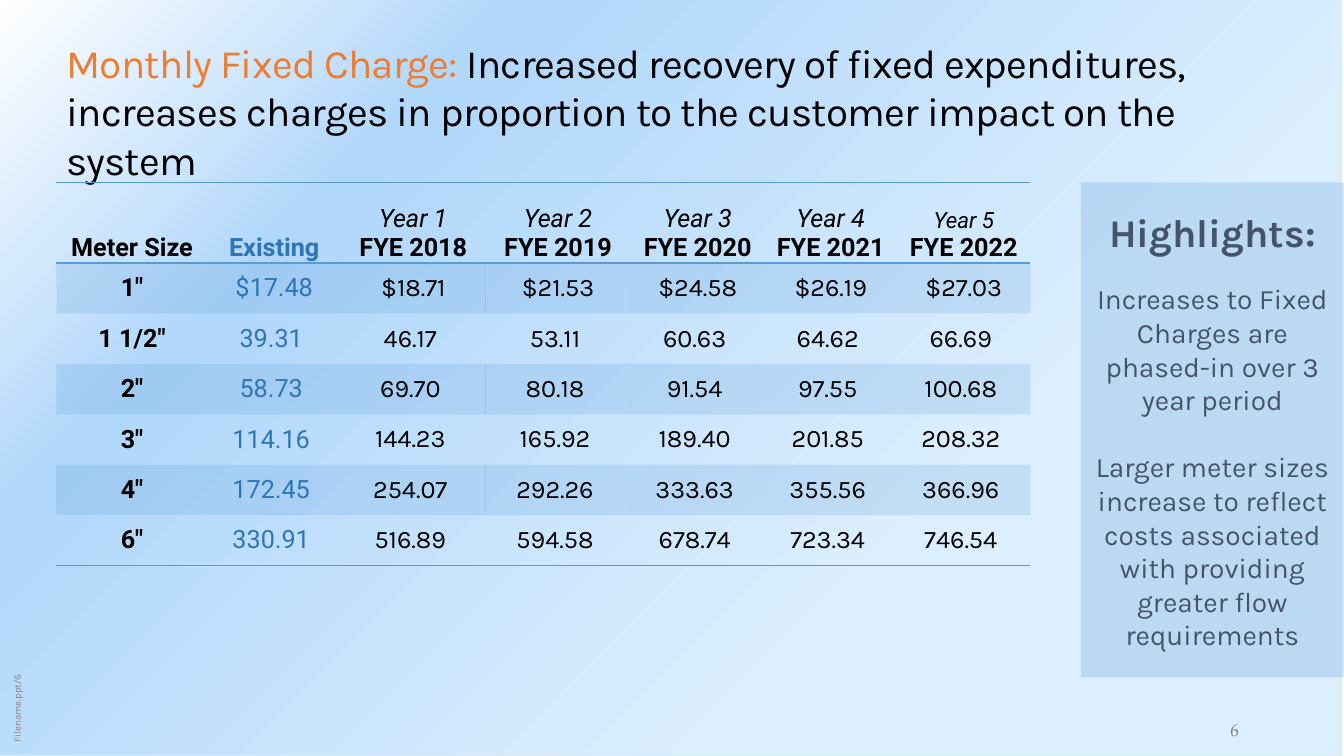
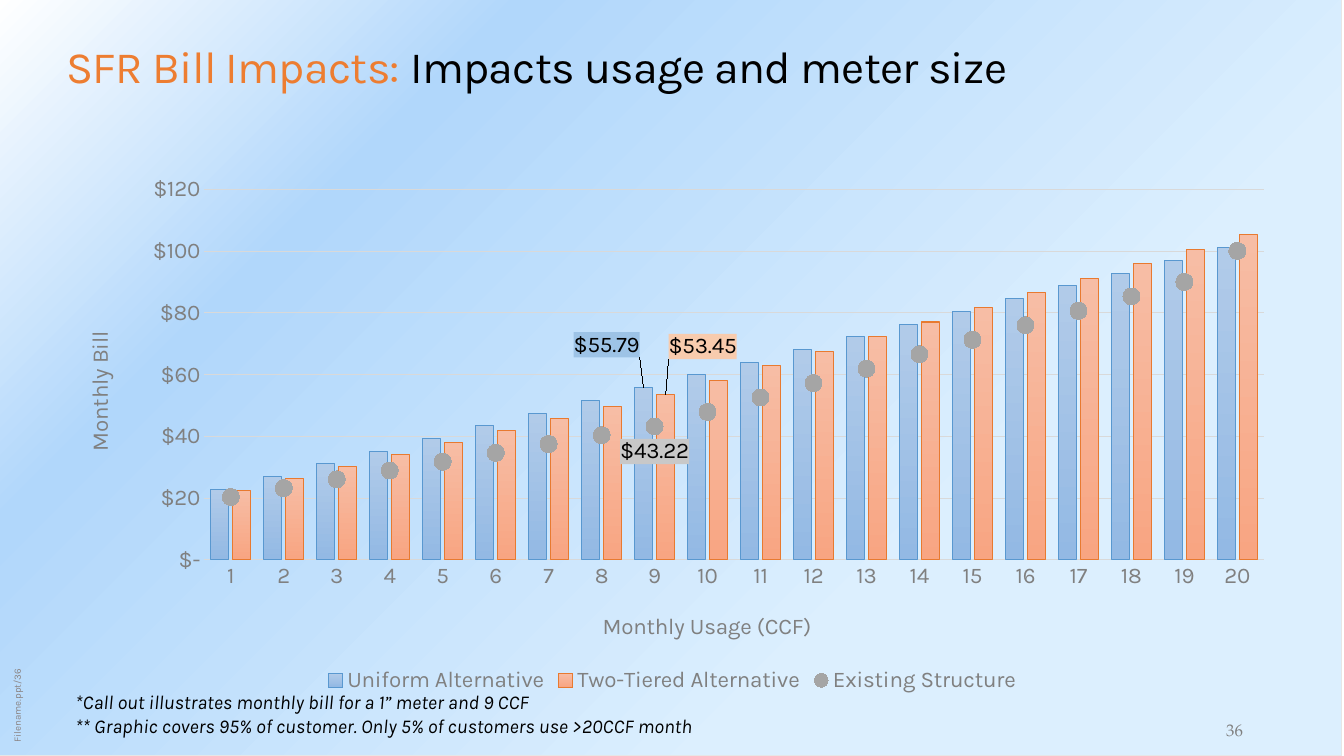
from pptx import Presentation
from pptx.chart.data import CategoryChartData
from pptx.dml.color import RGBColor
from pptx.enum.chart import XL_CHART_TYPE, XL_LABEL_POSITION, XL_LEGEND_POSITION, XL_MARKER_STYLE, XL_TICK_MARK
from pptx.enum.shapes import MSO_SHAPE
from pptx.enum.text import MSO_ANCHOR, MSO_AUTO_SIZE, PP_ALIGN
from pptx.oxml import parse_xml
from pptx.oxml.ns import nsdecls, qn
from pptx.util import Emu, Pt

SCALE = 9144
SANS, HEAD, SERIF = "Karla", "Roboto", "TeX Gyre Pagella"
BLACK, ORANGE, BLUE, DEEP, SLATE = "000000", "ED7D31", "5B9BD5", "2E75B6", "44546A"
GREY, PALE, TAG, MARK = "808080", "D9D9D9", "8B8585", "A5A5A5"
NO_STYLE = "{2D5ABB26-0587-4C30-8999-92F81FD0307C}"


def px(*values):
    return [Emu(v * SCALE) for v in values]


def rgb(color):
    return RGBColor.from_string(color)


def style(font, size, color, name=SANS, bold=False, italic=False):
    font.size, font.name, font.bold, font.italic = Pt(size), name, bold, italic
    font.color.rgb = rgb(color)


def tint(fill, props, color, percent):
    fill.solid()
    fill.fore_color.rgb = rgb(color)
    props.find(".//" + qn("a:srgbClr")).append(
        parse_xml(f'<a:alpha {nsdecls("a")} val="{percent * 1000}"/>'))


def add_text(s, box, lines, size, color, name=SANS, italic=False, align=PP_ALIGN.LEFT,
             anchor=MSO_ANCHOR.TOP, inset=None):
    sp = s.shapes.add_textbox(*px(*box))
    tf = sp.text_frame
    tf.word_wrap = True
    tf.vertical_anchor = anchor
    if inset is not None:
        tf.margin_left, tf.margin_right, tf.margin_top, tf.margin_bottom = px(*[inset] * 4)
    tf.text = "\n".join(lines)
    for p in tf.paragraphs:
        p.alignment = align
        style(p.font, size, color, name, italic=italic)
    return sp


def add_backdrop(prs, s):
    sp = s.shapes.add_shape(MSO_SHAPE.RECTANGLE, *px(-2, 0, 1333, 750))
    sp.shadow.inherit = False
    sp.line.color.rgb = rgb("E7E6E6")
    sp.line.width = Pt(0.75)
    stops = "".join(f'<a:gs pos="{at * 1000}"><a:srgbClr val="{color}"/></a:gs>'
                    for at, color in ((30, "DCEFFE"), (75, "B1D7FB"), (100, "FFFFFF")))
    sp._element.spPr.find(qn("a:prstGeom")).addnext(parse_xml(
        f'<a:gradFill {nsdecls("a")} rotWithShape="1"><a:gsLst>{stops}</a:gsLst>'
        '<a:path path="circle"><a:fillToRect l="100000" t="100000"/></a:path></a:gradFill>'))
    prs.slide_master.shapes._spTree.insert(2, sp._element)


def add_page(prs, number, topic, message, size):
    s = prs.slides.add_slide(prs.slide_layouts[5])
    title = s.shapes.title
    title.left, title.top, title.width, title.height = px(56, 33, 1222, 117)
    tf = title.text_frame
    tf.auto_size = MSO_AUTO_SIZE.NONE
    tf.vertical_anchor = MSO_ANCHOR.TOP
    p = tf.paragraphs[0]
    p.alignment = PP_ALIGN.LEFT
    for text, color in ((topic, ORANGE), (message, BLACK)):
        r = p.add_run()
        r.text = text
        style(r.font, size, color)
        r._r.get_or_add_rPr().set("spc", "-50")
    tag = add_text(s, (-117, 597, 267, 22), [f"Filename.ppt/{number}"], 7, TAG,
                   anchor=MSO_ANCHOR.BOTTOM, inset=5)
    tag.rotation = 270
    add_text(s, (1179, 709, 91, 30), [str(number)], 12, GREY, SERIF,
             align=PP_ALIGN.CENTER, anchor=MSO_ANCHOR.BOTTOM, inset=5)
    return s


def add_rule(cell, side):
    props = cell._tc.get_or_add_tcPr()
    index = len(props.findall(qn("a:lnT")))
    props.insert(index, parse_xml(
        f'<a:{side} {nsdecls("a")} w="12700"><a:solidFill><a:srgbClr val="{BLUE}"/>'
        f'</a:solidFill></a:{side}>'))


def fill_header(p, year, label, color):
    if year:
        r = p.add_run()
        r.text = year
        style(r.font, 16 if year == "Year 5" else 18, BLACK, HEAD, italic=True)
        p.add_line_break()
    r = p.add_run()
    r.text = label
    style(r.font, 18, color, HEAD, bold=True)


def add_rates(s, left, top, columns):
    count = len(columns[0][3])
    widths = [c[0] for c in columns]
    frame = s.shapes.add_table(count + 1, len(columns), *px(left, top, sum(widths), 80 + 50 * count))
    table = frame.table
    table.first_row = table.horz_banding = False
    table._tbl.tblPr.find(qn("a:tableStyleId")).text = NO_STYLE
    for i in range(count + 1):
        table.rows[i].height = px(50 if i else 80)[0]
    for j, (width, year, label, values) in enumerate(columns):
        table.columns[j].width = px(width)[0]
        color = DEEP if label == "Existing" else BLACK
        for i in range(count + 1):
            cell = table.cell(i, j)
            cell.margin_left, cell.margin_right, cell.margin_top, cell.margin_bottom = px(0, 0, 0, 0)
            cell.vertical_anchor = MSO_ANCHOR.MIDDLE if i else MSO_ANCHOR.BOTTOM
            if i % 2:
                tint(cell.fill, cell._tc.get_or_add_tcPr(), BLUE, 20)
            else:
                cell.fill.background()
            p = cell.text_frame.paragraphs[0]
            p.alignment = PP_ALIGN.CENTER
            if i:
                p.text = values[i - 1]
                style(p.font, 18, color, SANS if year else HEAD, bold=label == "Meter Size")
                if i > 1 and label != "Meter Size":
                    cell.margin_right = px(6)[0]
            else:
                fill_header(p, year, label, color)
                add_rule(cell, "lnT")
            if i in (0, count):
                add_rule(cell, "lnB")


def add_highlights(s, box, heading, points):
    sp = s.shapes.add_shape(MSO_SHAPE.RECTANGLE, *px(*box))
    sp.shadow.inherit = False
    tint(sp.fill, sp._element.spPr, BLUE, 25)
    sp.line.fill.background()
    tf = sp.text_frame
    tf.word_wrap = True
    tf.vertical_anchor = MSO_ANCHOR.MIDDLE
    tf.text = "\n".join([heading, *points])
    for i, p in enumerate(tf.paragraphs):
        p.alignment = PP_ALIGN.CENTER
        style(p.font, 20 if i else 28, SLATE, bold=i == 0)
        if i:
            p.space_before = Pt(19 if i == 1 else 24)


def set_layout(parent, index, edge=True, **parts):
    for old in parent.findall(qn("c:layout")):
        parent.remove(old)
    modes = '<c:xMode val="edge"/><c:yMode val="edge"/>' if edge else ""
    target = '<c:layoutTarget val="inner"/>' if "w" in parts else ""
    values = "".join(f'<c:{k} val="{v}"/>' for k, v in parts.items())
    parent.insert(index, parse_xml(
        f'<c:layout {nsdecls("c")}><c:manualLayout>{target}{modes}{values}</c:manualLayout></c:layout>'))


def split_line(bars):
    ser = bars.findall(qn("c:ser"))[-1]
    for tag in ser.findall(qn("c:invertIfNegative")):
        ser.remove(tag)
    line = parse_xml(f'<c:lineChart {nsdecls("c")}><c:grouping val="standard"/>'
                     '<c:varyColors val="0"/><c:marker val="1"/></c:lineChart>')
    line.insert(2, ser)
    for axis in bars.findall(qn("c:axId")):
        line.append(parse_xml(f'<c:axId {nsdecls("c")} val="{axis.get("val")}"/>'))
    bars.addnext(line)


def add_callout(ser, index, color, position, shift):
    ser.data_labels.show_value = False
    label = ser.points[index].data_label
    style(label.font, 16, BLACK)
    label.position = position
    dlbl = ser._element.find(".//" + qn("c:dLbl"))
    body = dlbl.find(qn("c:txPr"))
    body.addprevious(parse_xml(
        f'<c:numFmt {nsdecls("c")} formatCode="&quot;$&quot;0.00" sourceLinked="0"/>'))
    body.addprevious(parse_xml(
        f'<c:spPr {nsdecls("c", "a")}><a:solidFill><a:srgbClr val="{color}"/></a:solidFill></c:spPr>'))
    if shift:
        set_layout(dlbl, 1, edge=False, x=shift[0], y=shift[1])
        ser._element.find(qn("c:dLbls")).append(parse_xml(
            f'<c:extLst {nsdecls("c", "a")}><c:ext uri="{{CE6537A1-D6FC-4f65-9D91-7224C49458BB}}" '
            'xmlns:c15="http://schemas.microsoft.com/office/drawing/2012/chart">'
            '<c15:showLeaderLines val="1"/><c15:leaderLines><c:spPr><a:ln w="9525"><a:solidFill>'
            f'<a:srgbClr val="{BLACK}"/></a:solidFill></a:ln></c:spPr></c15:leaderLines>'
            '</c:ext></c:extLst>'))


def format_axis(axis, title, x, y):
    axis.major_tick_mark = axis.minor_tick_mark = XL_TICK_MARK.NONE
    style(axis.tick_labels.font, 16, GREY)
    p = axis.axis_title.text_frame.paragraphs[0]
    p.text = title
    style(p.font, 16, GREY)
    set_layout(axis._element.find(qn("c:title")), 1, x=x, y=y)


def add_bill_chart(s, box, series):
    data = CategoryChartData(number_format='"$"0.00')
    data.categories = [str(n) for n in range(1, 21)]
    for name, values in series:
        data.add_series(name, values)
    chart = s.shapes.add_chart(XL_CHART_TYPE.COLUMN_CLUSTERED, *px(*box), data).chart
    chart.has_title = False
    style(chart.font, 16, BLACK)
    chart.has_legend = True
    chart.legend.position = XL_LEGEND_POSITION.BOTTOM
    chart.legend.include_in_layout = False
    style(chart.legend.font, 16, GREY)

    cat, val = chart.category_axis, chart.value_axis
    format_axis(cat, "Monthly Usage (CCF)", 0.44, 0.83)
    format_axis(val, "Monthly Bill", 0.02, 0.3)
    val.minimum_scale, val.maximum_scale, val.major_unit = 0, 120, 20
    val.tick_labels.number_format = '"$"#,##0;;"$-"'
    val.tick_labels.number_format_is_linked = False
    val.format.line.fill.background()
    for line in (cat.format.line, val.major_gridlines.format.line):
        line.color.rgb = rgb(PALE)
        line.width = Pt(0.75)

    plot = chart.plots[0]
    plot.gap_width, plot.overlap, plot.vary_by_categories = 75, -25, False
    split_line(plot._element)
    set_layout(plot._element.getparent(), 0, x=0.12, y=0.04, w=0.86, h=0.7)
    looks = (("B1CBE9", "93B9E4", "5998D0", "9DC3E6", (-0.03, -0.05)),
             ("F7BDA5", "F8A582", "E87A30", "F8CBAD", (0.03, -0.06)))
    for ser, (light, dark, edge, tag, shift) in zip(plot.series, looks):
        fill = ser.format.fill
        fill.gradient()
        fill.gradient_angle = 270
        for stop, color in zip(fill.gradient_stops, (light, dark)):
            stop.color.rgb = rgb(color)
        ser.format.line.color.rgb = rgb(edge)
        ser.format.line.width = Pt(0.75)
        add_callout(ser, 8, tag, XL_LABEL_POSITION.OUTSIDE_END, shift)

    existing = chart.plots[1].series[0]
    existing.smooth = False
    existing.format.line.fill.background()
    existing.marker.style = XL_MARKER_STYLE.CIRCLE
    existing.marker.size = 12
    existing.marker.format.fill.solid()
    existing.marker.format.fill.fore_color.rgb = rgb(MARK)
    existing.marker.format.line.fill.background()
    add_callout(existing, 8, "C8C8C8", XL_LABEL_POSITION.BELOW, None)


def build_charge_slide(prs):
    s = add_page(prs, 6, "Monthly Fixed Charge: ",
                 "Increased recovery of fixed expenditures, increases charges in proportion "
                 "to the customer impact on the system", 28.8)
    add_backdrop(prs, s)
    add_rates(s, 56, 181, [
        (150, "", "Meter Size", ['1"', '1 1/2"', '2"', '3"', '4"', '6"']),
        (132, "", "Existing", ["$17.48", "39.31", "58.73", "114.16", "172.45", "330.91"]),
        (144, "Year 1", "FYE 2018", ["$18.71", "46.17", "69.70", "144.23", "254.07", "516.89"])])
    add_highlights(s, (1072, 181, 261, 491), "Highlights:", [
        "Increases to Fixed Charges are phased-in over 3 year period",
        "Larger meter sizes increase to reflect costs associated with providing greater flow requirements"])
    add_rates(s, 481, 181, [
        (145, "Year 2", "FYE 2019", ["$21.53", "53.11", "80.18", "165.92", "292.26", "594.58"]),
        (132, "Year 3", "FYE 2020", ["$24.58", "60.63", "91.54", "189.40", "333.63", "678.74"]),
        (132, "Year 4", "FYE 2021", ["$26.19", "64.62", "97.55", "201.85", "355.56", "723.34"]),
        (132, "Year 5", "FYE 2022", ["$27.03", "66.69", "100.68", "208.32", "366.96", "746.54"])])


def build_impact_slide(prs):
    s = add_page(prs, 36, "SFR Bill Impacts:", " Impacts usage and meter size", 32)
    add_bill_chart(s, (56, 167, 1222, 525), [
        ("Uniform Alternative", [
            22.83, 26.95, 31.07, 35.19, 39.31, 43.43, 47.55, 51.67, 55.79, 59.91,
            64.03, 68.15, 72.27, 76.39, 80.51, 84.63, 88.75, 92.87, 96.99, 101.11]),
        ("Two-Tiered Alternative", [
            22.57, 26.43, 30.29, 34.15, 38.01, 41.87, 45.73, 49.59, 53.45, 58.17,
            62.89, 67.61, 72.33, 77.05, 81.77, 86.49, 91.21, 95.93, 100.65, 105.37]),
        ("Existing Structure", [
            20.34, 23.2, 26.06, 28.92, 31.78, 34.64, 37.5, 40.36, 43.22, 47.9,
            52.58, 57.26, 61.94, 66.62, 71.3, 75.98, 80.66, 85.34, 90.02, 100.08])])
    add_text(s, (65, 680, 761, 57), [
        "*Call out illustrates monthly bill for a 1” meter and 9 CCF",
        "** Graphic covers 95% of customer. Only 5% of customers use >20CCF month"],
        14, BLACK, italic=True)


def main():
    prs = Presentation()
    prs.slide_width, prs.slide_height = px(1333, 750)
    build_charge_slide(prs)
    build_impact_slide(prs)
    prs.save("out.pptx")


if __name__ == "__main__":
    main()
